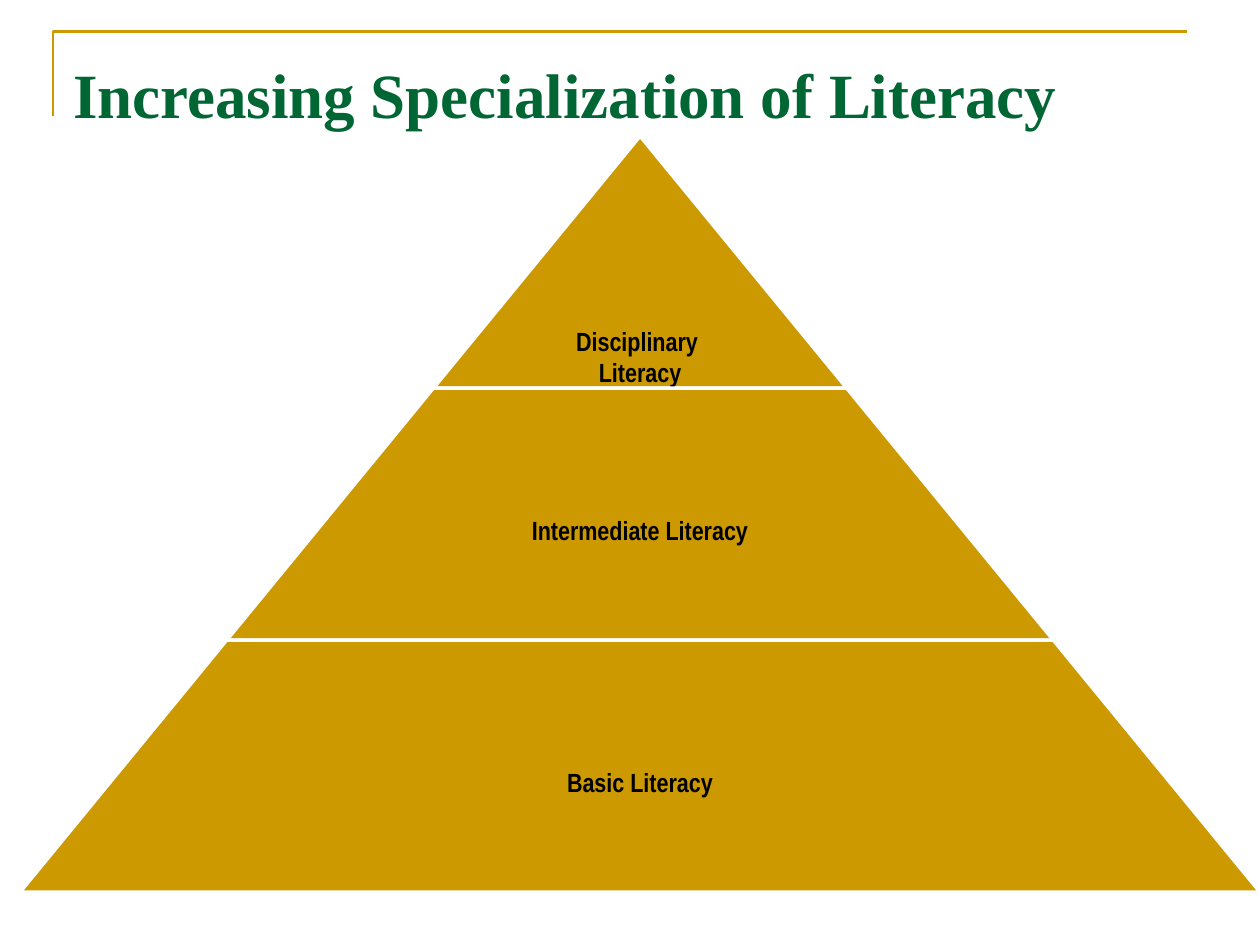
"""Build a slide with a three-tier pyramid of literacy levels."""
from dataclasses import dataclass

from pptx import Presentation
from pptx import util as u
from pptx.dml.color import RGBColor
from pptx.enum import shapes, text

GOLD = RGBColor(0xCC, 0x99, 0x00)
GREEN = RGBColor(0x00, 0x66, 0x33)
WHITE = RGBColor(0xFF, 0xFF, 0xFF)
BLACK = RGBColor(0x00, 0x00, 0x00)

SLIDE_WIDTH, SLIDE_HEIGHT = 10, 7.5
CENTER = 5.08
APEX = 1.08
ROW_HEIGHT = 2
ROW_SPREAD = 3.28
SLOPE = 0.82


@dataclass(frozen=True)
class Tier:
    """A pyramid row, its label, and the label's place as shares of the row."""

    row: int
    label: str
    label_width: float
    label_top: float


TIERS = (
    Tier(0, "Disciplinary \nLiteracy", 1, 0.75),
    Tier(1, "Intermediate Literacy", 0.65, 0.5),
    Tier(2, "Basic Literacy", 0.65, 0.5),
)


def format_text(frame, size: float, font: str, color: RGBColor, alignment) -> None:
    """Give every run of a text frame the same bold style."""
    frame.word_wrap = True
    frame.auto_size = text.MSO_AUTO_SIZE.NONE
    frame.vertical_anchor = text.MSO_ANCHOR.TOP
    for paragraph in frame.paragraphs:
        paragraph.alignment = alignment
        for run in paragraph.runs:
            run.font.size = u.Pt(size)
            run.font.name = font
            run.font.bold = True
            run.font.color.rgb = color


def centered_box(width: float, row: int) -> tuple:
    """Return left, top, width and height of a box centred in a pyramid row."""
    return tuple(
        u.Inches(length)
        for length in (CENTER - width / 2, APEX + row * ROW_HEIGHT, width, ROW_HEIGHT)
    )


def draw_corner(slide) -> None:
    """Draw the open corner line around the title."""
    builder = slide.shapes.build_freeform(
        u.Inches(0.42), u.Inches(0.92), scale=1.0
    )
    builder.add_line_segments(
        [(u.Inches(0.42), u.Inches(0.25)), (u.Inches(9.42), u.Inches(0.25))],
        close=False,
    )
    corner = builder.convert_to_shape()
    corner.shadow.inherit = False
    corner.fill.background()
    corner.line.color.rgb = GOLD
    corner.line.width = u.Pt(1.5)


def draw_title(slide, wording: str) -> None:
    """Place and format the title."""
    title = slide.shapes.title
    title.left, title.top = u.Inches(0.48), u.Inches(0.39)
    title.width, title.height = u.Inches(8.08), u.Inches(0.7)
    title.text_frame.text = wording
    format_text(
        title.text_frame, 36, "Times New Roman", GREEN, text.PP_ALIGN.LEFT
    )


def draw_tier(slide, tier: Tier) -> None:
    """Draw one pyramid row and its label."""
    width = (tier.row + 1) * ROW_SPREAD
    band = slide.shapes.add_shape(
        shapes.MSO_SHAPE.TRAPEZOID, *centered_box(width, tier.row)
    )
    band.adjustments[0] = SLOPE
    band.shadow.inherit = False
    band.fill.solid()
    band.fill.fore_color.rgb = GOLD
    band.line.color.rgb = WHITE
    band.line.width = u.Pt(2)

    label = slide.shapes.add_textbox(
        *centered_box(width * tier.label_width, tier.row)
    )
    frame = label.text_frame
    frame.text = tier.label
    frame.margin_left = frame.margin_right = u.Inches(0.02)
    frame.margin_top = u.Inches(tier.label_top * ROW_HEIGHT)
    frame.margin_bottom = 0
    format_text(frame, 15, "Arial Narrow", BLACK, text.PP_ALIGN.CENTER)


def main() -> None:
    """Build and save the presentation."""
    presentation = Presentation()
    presentation.slide_width = u.Inches(SLIDE_WIDTH)
    presentation.slide_height = u.Inches(SLIDE_HEIGHT)
    slide = presentation.slides.add_slide(presentation.slide_layouts[5])
    draw_corner(slide)
    for tier in TIERS:
        draw_tier(slide, tier)
    draw_title(slide, "Increasing Specialization of Literacy")
    presentation.save("out.pptx")


if __name__ == "__main__":
    main()
